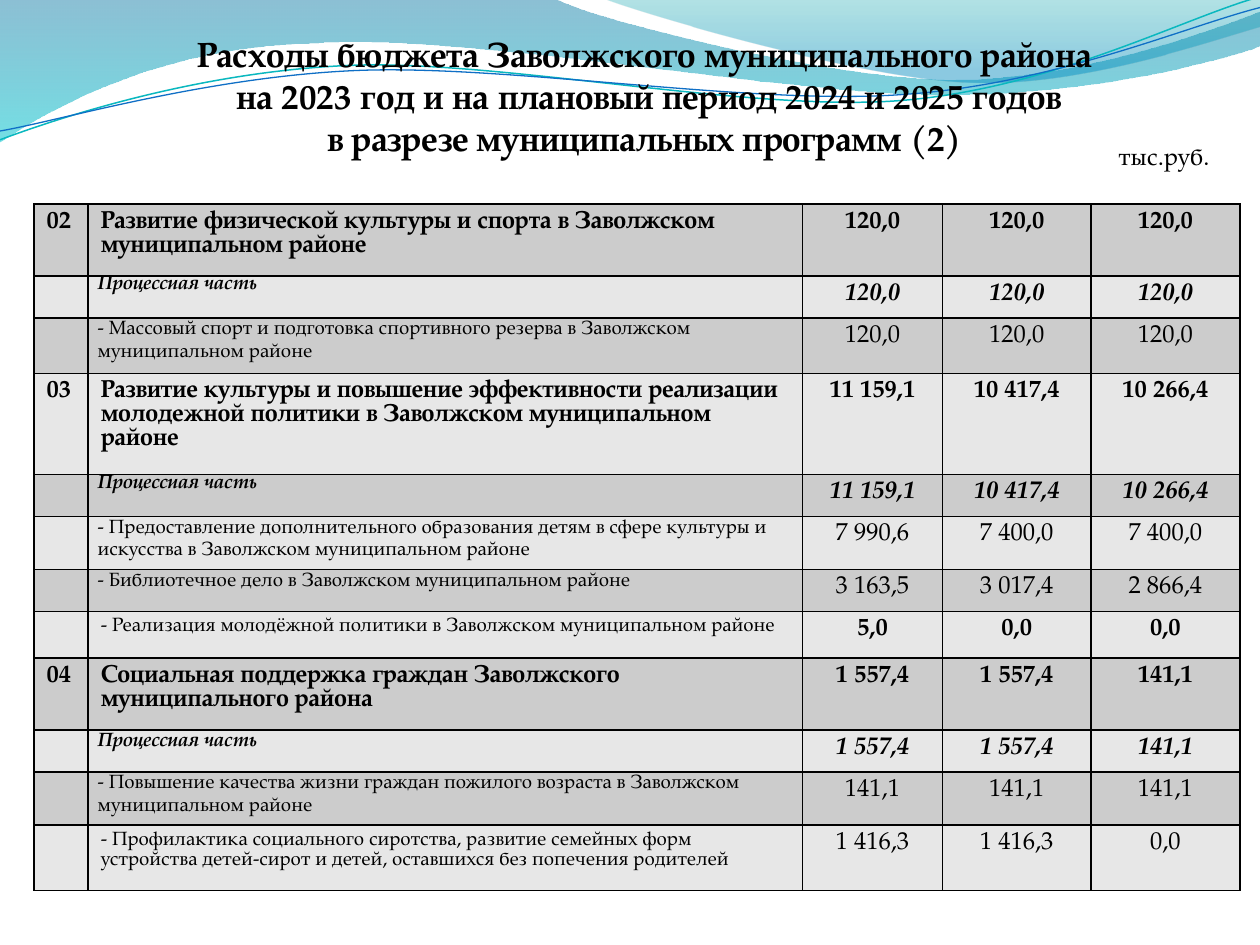
"""Build the slide on district budget spending by municipal programme."""
from lxml import etree
from pptx import Presentation
from pptx import util as u
from pptx.dml.color import RGBColor
from pptx.enum import text
from pptx.oxml.ns import qn

FONT = "TeX Gyre Pagella"
BLACK = RGBColor(0, 0, 0)
BANDS = RGBColor(0xCC, 0xCC, 0xCC), RGBColor(0xE7, 0xE7, 0xE7)
TEAL = RGBColor(0x0A, 0xB8, 0xBF)
BLUE = RGBColor(0x0F, 0x6F, 0xC6)
DEEP_BLUE = RGBColor(0x00, 0x74, 0xA1)
CYAN = RGBColor(0x00, 0xC6, 0xCF)
SEA = RGBColor(0x00, 0xA1, 0xA9)
SKY = RGBColor(0x00, 0x8B, 0xBF)

TITLE = [
    "Расходы бюджета Заволжского муниципального района",
    " на 2023 год и на плановый период 2024 и 2025 годов",
    "в разрезе муниципальных программ (2)",
]
UNIT = "тыс.руб."

COLUMNS = [0.43, 5.67, 1.11, 1.18, 1.18]
ROWS = [
    ("program", 0.57, "02", "Развитие физической культуры и спорта в Заволжском муниципальном районе",
     "120,0", "120,0", "120,0"),
    ("part", 0.33, "", "Процессная часть", "120,0", "120,0", "120,0"),
    ("item", 0.44, "", "- Массовый спорт и подготовка спортивного резерва в Заволжском муниципальном районе",
     "120,0", "120,0", "120,0"),
    ("program", 0.8, "03", "Развитие культуры и повышение эффективности реализации молодежной политики "
     "в Заволжском муниципальном районе", "11 159,1", "10 417,4", "10 266,4"),
    ("part", 0.33, "", "Процессная часть", "11 159,1", "10 417,4", "10 266,4"),
    ("item", 0.42, "", "- Предоставление дополнительного образования детям в сфере культуры и искусства "
     "в Заволжском муниципальном районе", "7 990,6", "7 400,0", "7 400,0"),
    ("item", 0.33, "", "- Библиотечное дело в Заволжском муниципальном районе",
     "3 163,5", "3 017,4", "2 866,4"),
    ("bold item", 0.37, "", "- Реализация молодёжной политики в Заволжском муниципальном районе",
     "5,0", "0,0", "0,0"),
    ("program", 0.57, "04", "Социальная поддержка граждан Заволжского муниципального района",
     "1 557,4", "1 557,4", "141,1"),
    ("wide part", 0.33, "", "Процессная часть", "1 557,4", "1 557,4", "141,1"),
    ("item", 0.42, "", "- Повышение качества жизни граждан пожилого возраста в Заволжском муниципальном районе",
     "141,1", "141,1", "141,1"),
    ("plain item", 0.52, "", "- Профилактика социального сиротства, развитие семейных форм устройства "
     "детей-сирот и детей, оставшихся без попечения родителей", "1 416,3", "1 416,3", "0,0"),
]

BOLD, ITALIC, SMALL = {"bold": True}, {"italic": True}, {"size": 11}
NAME_STYLES = {
    "program": BOLD,
    "part": SMALL | BOLD | ITALIC,
    "wide part": SMALL | BOLD | ITALIC | {"spacing": 1.15},
    "item": SMALL | {"spacing": 1.15},
    "bold item": SMALL,
    "plain item": SMALL,
}
VALUE_STYLES = {"program": BOLD, "part": BOLD | ITALIC, "wide part": BOLD | ITALIC, "bold item": BOLD}
TIGHT = {"part", "wide part", "item"}

BANNERS = [
    ((0, 0),
     [[(4.4, -0.01)],
      [(4.76, 0.17), (6.64, 0.63), (7.58, 0.63)], [(8.53, 0.63), (9.58, 0.26), (10, 0.09)],
      [(10.01, 0.36)],
      [(9.83, 0.44), (8.7, 0.76), (7.46, 0.75)], [(6.22, 0.75), (3.82, 0.28), (2.57, 0.34)],
      [(1.29, 0.36), (0.46, 0.83), (-0.01, 1.13)], [(0, 0)]],
     [(0, DEEP_BLUE, 45), (1, CYAN, 55)]),
    ((4.79, -0.01),
     [[(5.09, 0.11), (6.82, 0.62), (7.69, 0.65)], [(8.56, 0.69), (9.61, 0.32), (10, 0.21)],
      [(10, 0)], [(4.79, -0.01)]],
     [(0, SEA, 30), (0.8, SKY, 45)]),
]
WAVES = [
    ((0, 1.11),
     [[(0.48, 0.93), (1.58, 0.57), (2.77, 0.52)], [(3.95, 0.47), (5.93, 0.89), (7.13, 0.8)],
      [(8.33, 0.71), (9.38, 0.15), (9.98, -0.02)]], TEAL, 0.85),
    ((0, 1.04),
     [[(0.47, 0.96), (1.64, 0.61), (2.83, 0.56)], [(4.03, 0.51), (5.97, 0.84), (7.17, 0.75)],
      [(8.36, 0.67), (9.41, 0.21), (10, 0.06)]], BLUE, 0.75),
]


def inch(x):
    return u.Cm(x * 2.54)


def write(p, content, size=14, bold=False, italic=False, align=None, spacing=None):
    p.alignment = align
    if spacing:
        p.line_spacing = spacing
    if not content:
        etree.SubElement(p._p, qn("a:endParaRPr"), sz=str(size * 100))
        return
    r = p.add_run()
    r.text = content
    f = r.font
    f.name, f.size, f.bold, f.italic = FONT, u.Pt(size), bold, italic
    f.color.rgb = BLACK
    r._r.get_or_add_rPr().set("kern", "0")


def add_outline(s, start, segments, close):
    builder = s.shapes.build_freeform(*map(inch, start), scale=1.0)
    points = [(inch(x), inch(y)) for segment in segments for x, y in segment]
    builder.add_line_segments(points, close=close)
    sp = builder.convert_to_shape()
    sp.shadow.inherit = False
    lines = iter(list(sp._element.iter(qn("a:lnTo"))))
    for segment in segments:
        first, *others = [next(lines) for _ in segment]
        if others:
            first.tag = qn("a:cubicBezTo")
        for line in others:
            first.append(line[0])
            line.getparent().remove(line)
    return sp


def add_banner(s, start, segments, stops):
    sp = add_outline(s, start, segments, True)
    sp.line.fill.background()
    sp.fill.gradient()
    sp.fill.gradient_angle = 270
    for stop, (position, color, _) in zip(sp.fill.gradient_stops, stops):
        stop.position = position
        stop.color.rgb = color
    for clr, (_, _, opacity) in zip(sp._element.spPr.iter(qn("a:srgbClr")), stops):
        etree.SubElement(clr, qn("a:alpha"), val=str(opacity * 1000))


def add_wave(s, start, segments, color, width):
    sp = add_outline(s, start, segments, False)
    sp.fill.background()
    sp.line.color.rgb = color
    sp.line.width = u.Pt(width)


def add_borders(cell):
    tcPr = cell._tc.get_or_add_tcPr()
    for i, side in enumerate(("lnL", "lnR", "lnT", "lnB")):
        ln = etree.Element(qn(f"a:{side}"), w=str(u.Pt(1)))
        fill = etree.SubElement(ln, qn("a:solidFill"))
        etree.SubElement(fill, qn("a:srgbClr"), val=str(BLACK))
        tcPr.insert(i, ln)


def add_budget_table(s):
    heights = [row[1] for row in ROWS]
    table = s.shapes.add_table(len(ROWS), len(COLUMNS), inch(0.27), inch(1.62),
                               inch(sum(COLUMNS)), inch(sum(heights))).table
    for column, width in zip(table.columns, COLUMNS):
        column.width = inch(width)
    for i, (kind, height, *cells) in enumerate(ROWS):
        table.rows[i].height = inch(height)
        value = VALUE_STYLES.get(kind, {}) | {"align": text.PP_ALIGN.CENTER}
        styles = [BOLD, NAME_STYLES[kind], value, value, value]
        for j, (content, style) in enumerate(zip(cells, styles)):
            cell = table.cell(i, j)
            cell.fill.solid()
            cell.fill.fore_color.rgb = BANDS[i % 2]
            add_borders(cell)
            write(cell.text_frame.paragraphs[0], content, **style)
        if kind in TIGHT:
            name = table.cell(i, 1)
            name.margin_left = name.margin_right = u.Cm(0.19)
            name.margin_top = name.margin_bottom = 0


def main():
    prs = Presentation()
    prs.slide_width, prs.slide_height = inch(10), inch(7.5)
    s = prs.slides.add_slide(prs.slide_layouts[5])
    for banner in BANNERS:
        add_banner(s, *banner)
    for wave in WAVES:
        add_wave(s, *wave)

    title = s.shapes.title
    s.shapes._spTree.append(title._element)
    title.left, title.top, title.width, title.height = map(inch, (0.43, 0.21, 9.37, 1.11))
    tf = title.text_frame
    tf.auto_size = text.MSO_AUTO_SIZE.SHAPE_TO_FIT_TEXT
    tf.vertical_anchor = text.MSO_ANCHOR.TOP
    for i, line in enumerate(TITLE):
        p = tf.add_paragraph() if i else tf.paragraphs[0]
        p.space_before = u.Pt(0)
        write(p, line, size=20, bold=True, align=text.PP_ALIGN.CENTER)

    unit = s.shapes.add_textbox(*map(inch, (8.78, 1.07, 0.94, 0.34)))
    unit.text_frame.word_wrap = False
    unit.text_frame.auto_size = text.MSO_AUTO_SIZE.SHAPE_TO_FIT_TEXT
    write(unit.text_frame.paragraphs[0], UNIT)
    add_budget_table(s)
    prs.save("out.pptx")


if __name__ == "__main__":
    main()
